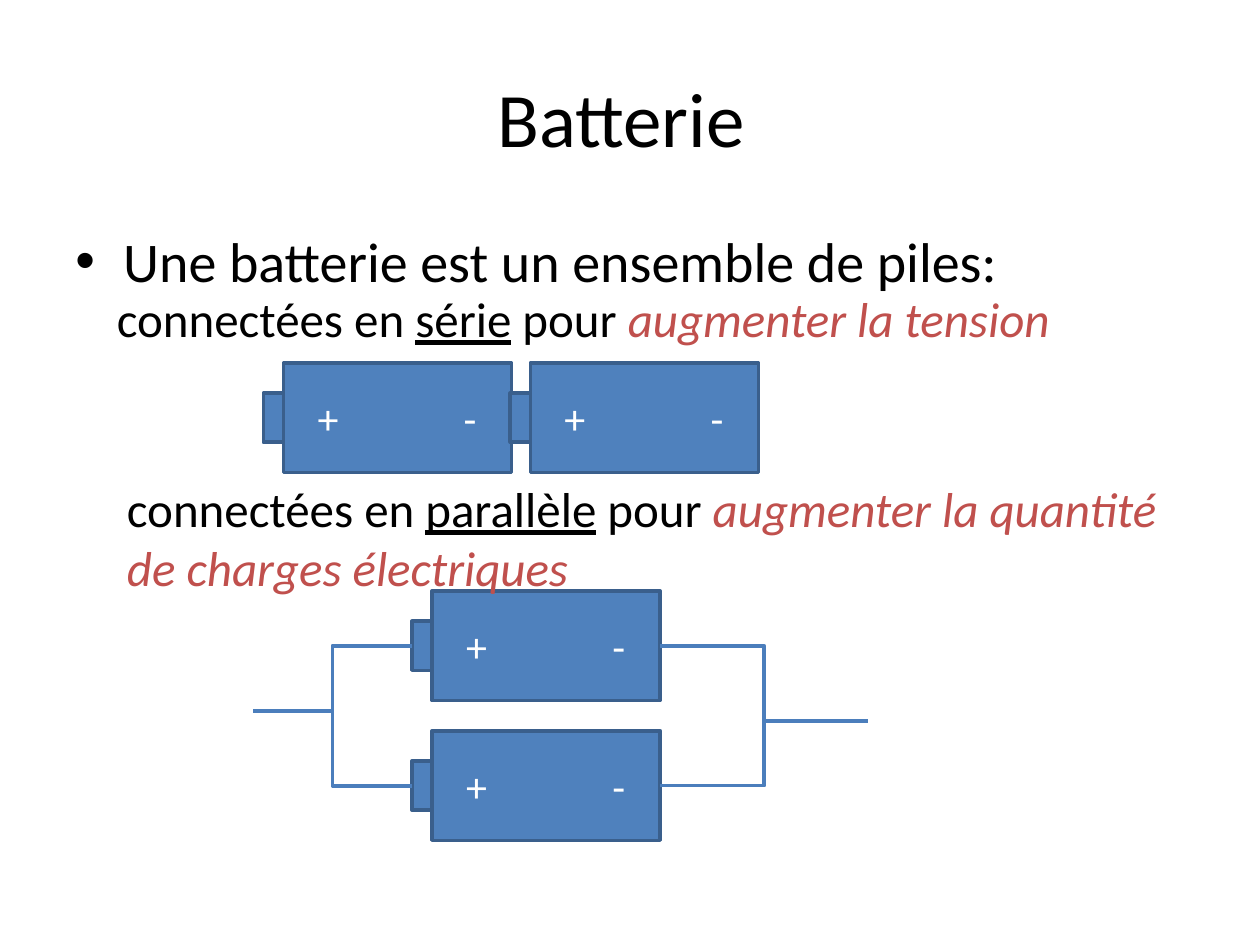
from dataclasses import dataclass

from lxml import etree
from pptx import Presentation
from pptx import util as u
from pptx.dml.color import RGBColor
from pptx.enum import shapes, text
from pptx.oxml.ns import qn

Inches, Pt = u.Inches, u.Pt


@dataclass(frozen=True)
class Theme:
    font: str = "Calibri"
    ink: RGBColor = RGBColor(0x00, 0x00, 0x00)
    accent: RGBColor = RGBColor(0xC0, 0x50, 0x4D)
    cell: RGBColor = RGBColor(0x4F, 0x81, 0xBD)
    cell_edge: RGBColor = RGBColor(0x3A, 0x5F, 0x8C)
    wire: RGBColor = RGBColor(0x4B, 0x7E, 0xBC)
    sign: RGBColor = RGBColor(0xFF, 0xFF, 0xFF)
    title_size: int = 44
    lead_size: int = 32
    body_size: int = 28
    sign_size: int = 24
    edge_width: float = 2
    wire_width: float = 2.25


THEME = Theme()
CELL_W, CELL_H = 1.81, 0.87
CAP_W, CAP_H = 0.16, 0.39


def style(font, size, color):
    font.name, font.size, font.color.rgb = THEME.font, Pt(size), color


def place(shape, box):
    shape.left, shape.top, shape.width, shape.height = map(Inches, box)


def add_title(slide, box, wording):
    title = slide.shapes.title
    place(title, box)
    title.text_frame.text = wording
    title.text_frame.vertical_anchor = text.MSO_ANCHOR.MIDDLE
    heading = title.text_frame.paragraphs[0]
    heading.alignment = text.PP_ALIGN.CENTER
    style(heading.font, THEME.title_size, THEME.ink)


def add_lead(slide, box, wording):
    frame = slide.shapes.add_textbox(*map(Inches, box)).text_frame
    frame.word_wrap = True
    lead = frame.paragraphs[0]
    lead.text = wording
    style(lead.font, THEME.lead_size, THEME.ink)
    # Hanging bullet
    props = lead._p.get_or_add_pPr()
    props.set("marL", str(Inches(0.38)))
    props.set("indent", str(-Inches(0.38)))
    bullet_font = etree.Element(qn("a:buFont"), typeface="Arial")
    bullet = etree.Element(qn("a:buChar"), char="•")
    props.insert(0, bullet_font)
    props.insert(1, bullet)


def add_statement(slide, box, mode, effects):
    """Write how cells are connected, with one line per effect text."""
    frame = slide.shapes.add_textbox(*map(Inches, box)).text_frame
    frame.word_wrap = False
    frame.auto_size = text.MSO_AUTO_SIZE.SHAPE_TO_FIT_TEXT
    for index, effect in enumerate(effects):
        line = frame.add_paragraph() if index else frame.paragraphs[0]
        style(line.font, THEME.body_size, THEME.ink)
        if index == 0:
            for wording, underlined in (("connectées en ", False), (mode, True), (" pour ", False)):
                run = line.add_run()
                run.text = wording
                run.font.underline = underlined
        gain = line.add_run()
        gain.text = effect
        gain.font.italic = True
        gain.font.color.rgb = THEME.accent


def add_block(group, box):
    block = group.shapes.add_shape(shapes.MSO_SHAPE.RECTANGLE, *map(Inches, box))
    block.shadow.inherit = False
    block.fill.solid()
    block.fill.fore_color.rgb = THEME.cell
    block.line.color.rgb = THEME.cell_edge
    block.line.width = Pt(THEME.edge_width)
    return block


def add_cell(group, left, top):
    """Draw one cell; left and top belong to its body, the cap sits before it."""
    body = add_block(group, (left, top, CELL_W, CELL_H))
    add_block(group, (left - CAP_W, top + (CELL_H - CAP_H) / 2, CAP_W, CAP_H))
    frame = body.text_frame
    frame.vertical_anchor = text.MSO_ANCHOR.MIDDLE
    frame.margin_left = Inches(0.27)
    signs = frame.paragraphs[0]
    signs.text = "+\t-"
    signs.alignment = text.PP_ALIGN.LEFT
    style(signs.font, THEME.sign_size, THEME.sign)
    # The tab stop sets the minus sign at the far end
    stops = etree.Element(qn("a:tabLst"))
    etree.SubElement(stops, qn("a:tab"), pos=str(Inches(1.16)), algn="l")
    signs._p.get_or_add_pPr().insert(0, stops)


def add_wire(group, start, end):
    wire = group.shapes.add_connector(shapes.MSO_CONNECTOR.ELBOW, *map(Inches, start + end))
    wire.line.color.rgb = THEME.wire
    wire.line.width = Pt(THEME.wire_width)
    etree.SubElement(wire._element.spPr, qn("a:effectLst"))


def add_series(slide, box):
    left, top, width, _ = box
    group = slide.shapes.add_group_shape()
    for body_left in (left + CAP_W, left + width - CELL_W):
        add_cell(group, body_left, top)


def add_parallel(slide, box):
    left, top, width, height = box
    group = slide.shapes.add_group_shape()
    body_left = left + 1.42
    left_end = (left, top + 0.95)
    right_end = (left + width, top + 1.03)
    for cell_top in (top, top + height - CELL_H):
        add_cell(group, body_left, cell_top)
        middle = cell_top + CELL_H / 2
        add_wire(group, (body_left - CAP_W, middle), left_end)
        add_wire(group, (body_left + CELL_W, middle), right_end)


def main():
    deck = Presentation()
    deck.slide_width, deck.slide_height = Inches(10), Inches(7.5)
    slide = deck.slides.add_slide(deck.slide_layouts[5])

    add_title(slide, (0.5, 0.3, 9, 1.25), "Batterie ")
    add_lead(slide, (0.5, 1.75, 9, 4.95), "Une batterie est un ensemble de piles:")

    # Cells in series
    add_series(slide, (2.09, 2.88, 3.93, CELL_H))
    add_statement(slide, (0.83, 2.24, 7.74, 0.57), "série", ["augmenter la tension"])

    # Cells in parallel
    add_parallel(slide, (2.01, 4.69, 4.88, 1.98))
    add_statement(slide, (0.91, 3.75, 8.54, 1.04), "parallèle",
                  ["augmenter la quantité", "de charges électriques"])

    deck.save("out.pptx")


if __name__ == "__main__":
    main()
